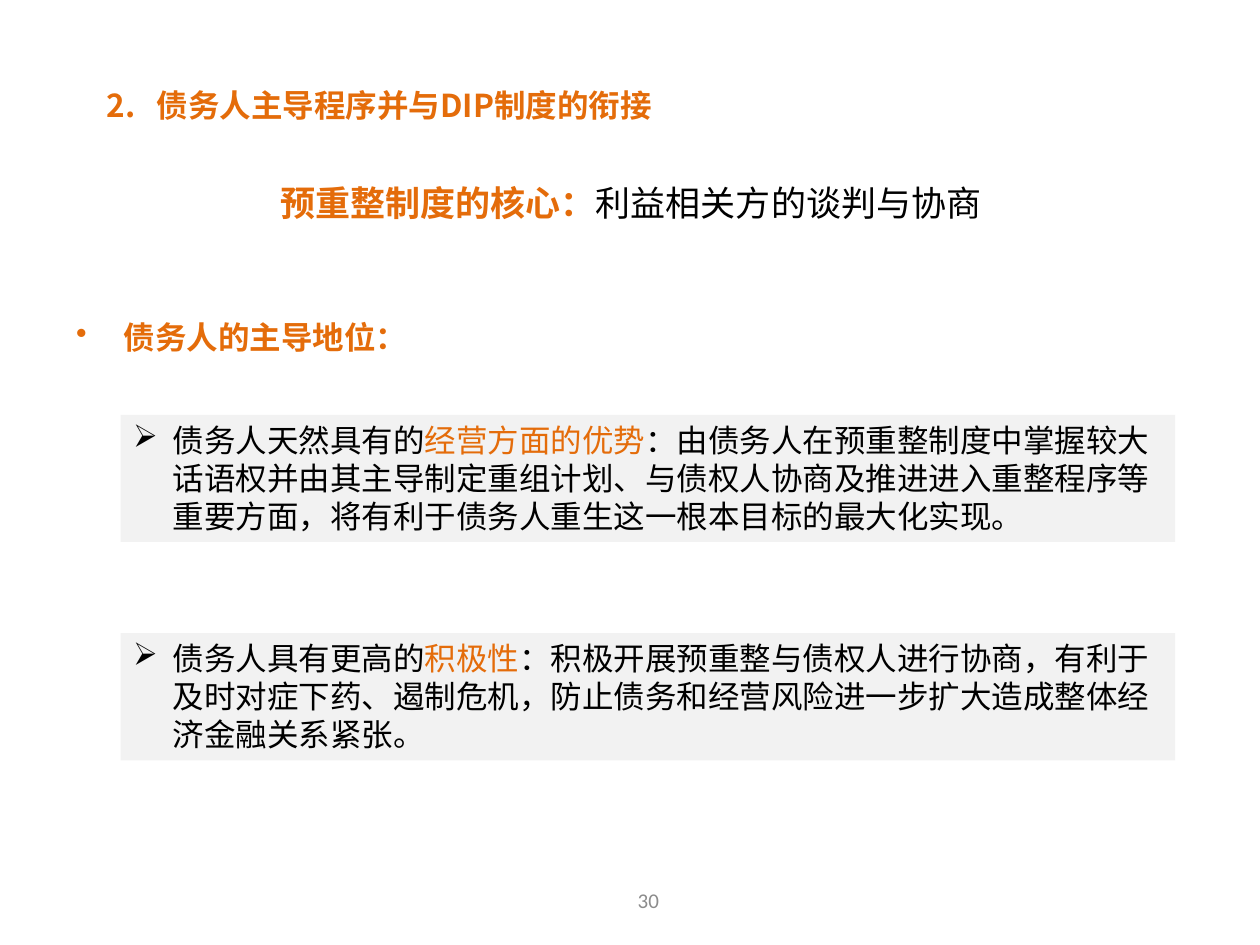
from dataclasses import dataclass
from typing import Optional

from lxml.etree import SubElement
from pptx import Presentation
from pptx.dml.color import RGBColor
from pptx.enum.shapes import MSO_SHAPE
from pptx.enum.text import MSO_ANCHOR, MSO_AUTO_SIZE, PP_ALIGN
from pptx.oxml.ns import qn
from pptx.util import Pt

ORANGE = RGBColor(0xE4, 0x6C, 0x0A)
BLACK = RGBColor(0x00, 0x00, 0x00)
PAGE_GRAY = RGBColor(0x8C, 0x8C, 0x8C)
PANEL_GRAY = RGBColor(0xF2, 0xF2, 0xF2)
CHINESE_FONT = "Noto Sans CJK SC"


@dataclass(frozen=True)
class Span:
    text: str
    color: RGBColor = BLACK
    size: float = 18
    bold: bool = False
    font_name: str = CHINESE_FONT


@dataclass(frozen=True)
class Line:
    spans: tuple[Span, ...]
    alignment: PP_ALIGN = PP_ALIGN.LEFT
    hanging: float = 0
    bullet: Optional[str] = None
    space_before: float = 0
    line_spacing: float = 1.0


@dataclass(frozen=True)
class Block:
    left: float
    top: float
    width: float
    height: float
    lines: tuple[Line, ...]
    fill: Optional[RGBColor] = None
    anchor: MSO_ANCHOR = MSO_ANCHOR.TOP
    grows: bool = False


def add_span(paragraph, span: Span) -> None:
    run = paragraph.add_run()
    run.text = span.text
    run.font.size = Pt(span.size)
    run.font.bold = span.bold
    run.font.color.rgb = span.color
    run.font.name = span.font_name
    # East Asian characters take their own typeface element
    properties = run.font._element
    SubElement(properties, qn("a:ea")).set("typeface", span.font_name)


def fill_paragraph(paragraph, line: Line) -> None:
    properties = paragraph._p.get_or_add_pPr()
    if line.hanging:
        properties.set("marL", str(Pt(line.hanging)))
        properties.set("indent", str(-Pt(line.hanging)))
    if line.bullet:
        SubElement(properties, qn("a:buChar")).set("char", line.bullet)
    paragraph.alignment = line.alignment
    paragraph.line_spacing = line.line_spacing
    paragraph.space_before = Pt(line.space_before)
    for span in line.spans:
        add_span(paragraph, span)


def add_block(slide, block: Block) -> None:
    frame = Pt(block.left), Pt(block.top), Pt(block.width), Pt(block.height)
    if block.fill is None:
        shape = slide.shapes.add_textbox(*frame)
    else:
        shape = slide.shapes.add_shape(MSO_SHAPE.RECTANGLE, *frame)
        shape.shadow.inherit = False
        shape.fill.solid()
        shape.fill.fore_color.rgb = block.fill
        shape.line.fill.background()
    text_frame = shape.text_frame
    text_frame.word_wrap = True
    text_frame.vertical_anchor = block.anchor
    text_frame.auto_size = (
        MSO_AUTO_SIZE.SHAPE_TO_FIT_TEXT if block.grows else MSO_AUTO_SIZE.NONE
    )
    for index, line in enumerate(block.lines):
        paragraph = text_frame.add_paragraph() if index else text_frame.paragraphs[0]
        fill_paragraph(paragraph, line)


def argument_panel(top: float, opening: str, emphasis: str, explanation: str) -> Block:
    spans = (Span(opening), Span(emphasis, ORANGE), Span(explanation))
    line = Line(spans, hanging=22.5, bullet="➢")
    return Block(69, top, 602.5, 72.7, (line,), fill=PANEL_GRAY, grows=True)


# Page number
PAGE_NUMBER = Block(
    286.5, 500, 168, 28.8,
    (Line((Span("30", PAGE_GRAY, 12, font_name="Calibri"),), PP_ALIGN.CENTER),),
    anchor=MSO_ANCHOR.MIDDLE,
)

# Core statement and the heading of the two arguments
CORE_STATEMENT = Line(
    (
        Span("预重整制度的核心：", ORANGE, 20, True),
        Span("利益相关方的谈判与协商", size=20),
    ),
    PP_ALIGN.CENTER,
)
ARGUMENT_HEADING = Line(
    (Span("债务人的主导地位：", ORANGE, bold=True),),
    hanging=27, bullet="•", space_before=54,
)
BODY = Block(36.5, 100, 648, 422, (CORE_STATEMENT, ARGUMENT_HEADING))

# Arguments
ARGUMENTS = (
    argument_panel(
        237, "债务人天然具有的", "经营方面的优势",
        "：由债务人在预重整制度中掌握较大话语权并由其主导制定重组计划、"
        "与债权人协商及推进进入重整程序等重要方面，"
        "将有利于债务人重生这一根本目标的最大化实现。",
    ),
    argument_panel(
        361.75, "债务人具有更高的", "积极性",
        "：积极开展预重整与债权人进行协商，有利于及时对症下药、遏制危机，"
        "防止债务和经营风险进一步扩大造成整体经济金融关系紧张。",
    ),
)

# Section title, its number set off by a hanging indent
TITLE = Block(
    54, 24, 365, 44.6,
    (
        Line(
            (Span("2.\t债务人主导程序并与DIP制度的衔接", ORANGE, bold=True),),
            hanging=28.5, line_spacing=2.0,
        ),
    ),
    grows=True,
)


def main() -> None:
    presentation = Presentation()
    presentation.slide_width = Pt(720)
    presentation.slide_height = Pt(540)
    slide = presentation.slides.add_slide(presentation.slide_layouts[6])
    for block in (PAGE_NUMBER, BODY, *ARGUMENTS, TITLE):
        add_block(slide, block)
    presentation.save("out.pptx")


if __name__ == "__main__":
    main()
